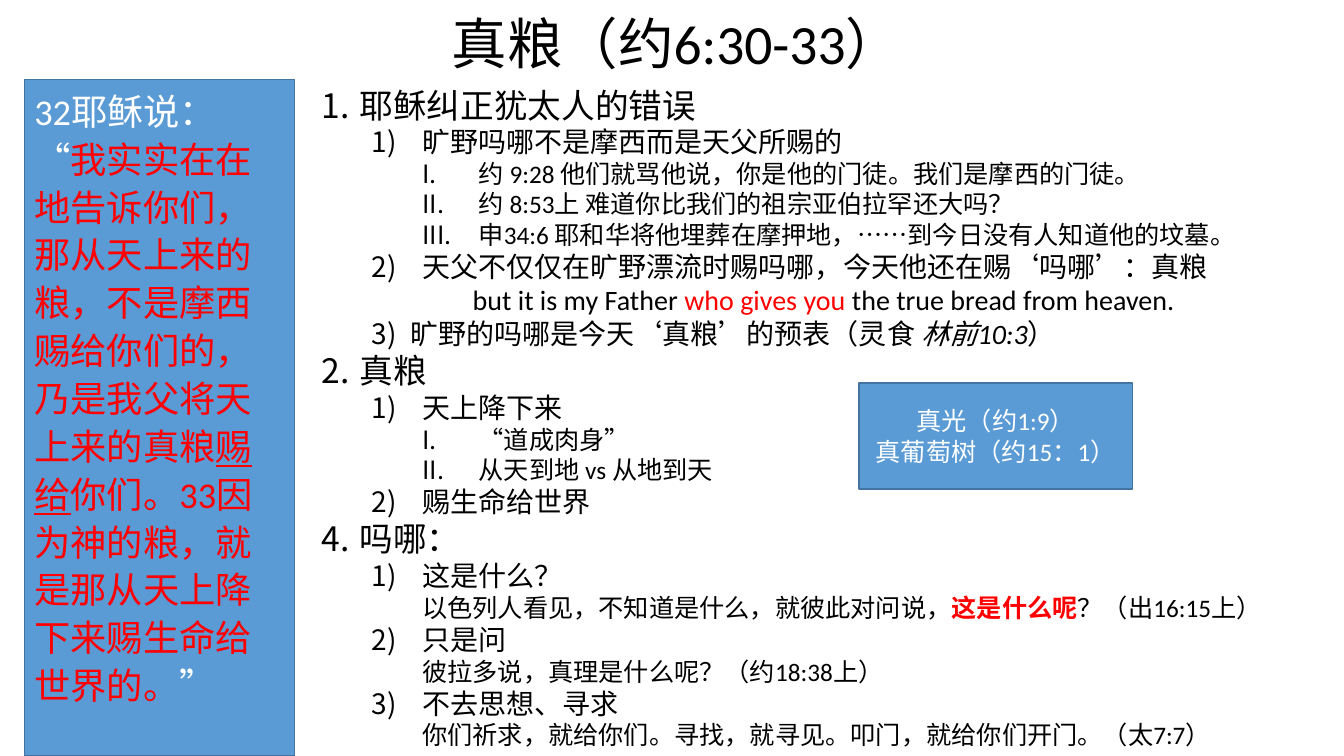
from dataclasses import dataclass

import pptx
import pptx.dml.color
import pptx.enum.lang
import pptx.enum.shapes
import pptx.enum.text
import pptx.oxml
import pptx.oxml.ns
import pptx.util

Inches = pptx.util.Inches
Pt = pptx.util.Pt
ALIGN = pptx.enum.text.PP_ALIGN
ANCHOR = pptx.enum.text.MSO_ANCHOR
FIT = pptx.enum.text.MSO_AUTO_SIZE


@dataclass(frozen=True)
class Theme:
    font: str = "Calibri"
    ink: str = "000000"
    light: str = "FFFFFF"
    accent: str = "FF0000"
    fill: str = "5B9BD5"
    border: str = "43739E"
    title_size: float = 39.6
    verse_size: float = 25.9
    point_size: float = 24
    sub_size: float = 20
    detail_size: float = 18


THEME = Theme()

# Outline style: level, size, left margin, hanging indent, numbering
STYLES = {
    "point": (0, THEME.point_size, 0.38, -0.38, "arabicPeriod"),
    "sub": (1, THEME.sub_size, 1, -0.5, "arabicParenR"),
    "close_sub": (1, THEME.sub_size, 0.88, -0.38, "arabicParenR"),
    "detail": (2, THEME.detail_size, 1.56, -0.56, "romanUcPeriod"),
    "note": (2, THEME.detail_size, 1, 0, None),
    "quote": (3, THEME.sub_size, 1.5, 0, None),
}

# Each entry: style, then runs as text or (text, format)
OUTLINE = [
    ("point", "耶稣纠正犹太人的错误"),
    ("sub", "旷野吗哪不是摩西而是天父所赐的"),
    ("detail", "约 9:28 他们就骂他说，你是他的门徒。我们是摩西的门徒。"),
    ("detail", "约 8:53上 难道你比我们的祖宗亚伯拉罕还大吗？"),
    ("detail", "申34:6 耶和华将他埋葬在摩押地，……到今日没有人知道他的坟墓。"),
    ("sub", "天父不仅仅在旷野漂流时赐吗哪，今天他还在赐‘吗哪’：真粮"),
    ("quote", "but it is my Father ", ("who gives you ", {"color": THEME.accent}),
     "the true bread from heaven."),
    ("close_sub", "旷野的吗哪是今天‘真粮’的预表（灵食 ", ("林前10:3", {"italic": True}), "）"),
    ("point", "真粮"),
    ("sub", "天上降下来"),
    ("detail", "“道成肉身”"),
    ("detail", "从天到地 vs 从地到天"),
    ("sub", "赐生命给世界"),
    ("point", "吗哪："),
    ("sub", "这是什么？"),
    ("note", "以色列人看见，不知道是什么，就彼此对问说，",
     ("这是什么呢", {"color": THEME.accent, "bold": True}), "？（出16:15上）"),
    ("sub", "只是问"),
    ("note", "彼拉多说，真理是什么呢？（约18:38上）"),
    ("sub", "不去思想、寻求"),
    ("note", "你们祈求，就给你们。寻找，就寻见。叩门，就给你们开门。（太7:7）"),
]
START_NUMBERS = {"吗哪：": 4}

VERSE = [
    ("32耶稣说：“", {"color": THEME.light}),
    "我实实在在地告诉你们，那从天上来的粮，不是摩西赐给你们的，乃是我父将天上来的真粮",
    ("赐给", {"underline": True}),
    "你们。33因为神的粮，就是那从天上降下来赐生命给世界的。",
    ("”", {"color": THEME.light}),
]


def rgb(color):
    return pptx.dml.color.RGBColor.from_string(color)


def add_text(paragraph, text, size, color=THEME.ink, bold=False, italic=False, underline=False):
    run = paragraph.add_run()
    run.text = text
    font = run.font
    font.name = THEME.font
    font.size = Pt(size)
    font.color.rgb = rgb(color)
    font.bold, font.italic, font.underline = bold, italic, underline
    font.language_id = pptx.enum.lang.MSO_LANGUAGE_ID.SIMPLIFIED_CHINESE


def add_runs(paragraph, runs, **base):
    for run in runs:
        text, changes = (run, {}) if isinstance(run, str) else run
        add_text(paragraph, text, **{**base, **changes})


def set_list_format(paragraph, left, indent, numbering=None, start=None):
    properties = paragraph._p.get_or_add_pPr()
    properties.set("marL", str(Inches(left)))
    properties.set("indent", str(Inches(indent)))
    bullet = pptx.oxml.parse_xml(
        f'<a:{"buAutoNum" if numbering else "buNone"} {pptx.oxml.ns.nsdecls("a")}/>')
    if numbering:
        bullet.set("type", numbering)
    if start:
        bullet.set("startAt", str(start))
    properties.append(bullet)


def place(shape, left, top, width, height):
    shape.left, shape.top = Inches(left), Inches(top)
    shape.width, shape.height = Inches(width), Inches(height)


def paint_box(shape):
    shape.fill.solid()
    shape.fill.fore_color.rgb = rgb(THEME.fill)
    shape.line.color.rgb = rgb(THEME.border)
    shape.line.width = Pt(1)


def fill_title(title):
    place(title, 0.96, 0.13, 11.5, 0.66)
    frame = title.text_frame
    frame.auto_size = FIT.NONE
    frame.vertical_anchor = ANCHOR.MIDDLE
    paragraph = frame.paragraphs[0]
    paragraph.alignment = ALIGN.CENTER
    paragraph.line_spacing = 0.9
    add_text(paragraph, "真粮（约6:30-33）", THEME.title_size)


def fill_verse_panel(panel):
    place(panel, 0.24, 0.79, 2.68, 6.71)
    paint_box(panel)
    frame = panel.text_frame
    frame.auto_size = FIT.NONE
    frame.vertical_anchor = ANCHOR.TOP
    paragraph = frame.paragraphs[0]
    paragraph.line_spacing = 1.1
    paragraph.space_before = Pt(10)
    set_list_format(paragraph, 0, 0)
    add_runs(paragraph, VERSE, size=THEME.verse_size, color=THEME.accent)


def add_outline(slide):
    box = slide.shapes.add_textbox(Inches(3.09), Inches(0.79), Inches(10.07), Inches(7.07))
    frame = box.text_frame
    frame.word_wrap = True
    frame.auto_size = FIT.SHAPE_TO_FIT_TEXT
    for index, (style, *runs) in enumerate(OUTLINE):
        paragraph = frame.add_paragraph() if index else frame.paragraphs[0]
        level, size, left, indent, numbering = STYLES[style]
        paragraph.level = level
        set_list_format(paragraph, left, indent, numbering, START_NUMBERS.get(runs[0]))
        add_runs(paragraph, runs, size=size)


def add_callout(slide, lines):
    rectangle = pptx.enum.shapes.MSO_SHAPE.RECTANGLE
    callout = slide.shapes.add_shape(
        rectangle, Inches(8.52), Inches(3.8), Inches(2.71), Inches(1.05))
    callout.shadow.inherit = False
    paint_box(callout)
    frame = callout.text_frame
    frame.word_wrap = True
    frame.vertical_anchor = ANCHOR.MIDDLE
    for index, line in enumerate(lines):
        paragraph = frame.add_paragraph() if index else frame.paragraphs[0]
        paragraph.alignment = ALIGN.CENTER
        add_text(paragraph, line, THEME.detail_size, color=THEME.light)


def main():
    presentation = pptx.Presentation()
    presentation.slide_width = Inches(13.33)
    presentation.slide_height = Inches(7.5)
    slide = presentation.slides.add_slide(presentation.slide_layouts[1])

    # Title and scripture panel
    fill_title(slide.shapes.title)
    fill_verse_panel(slide.placeholders[1])

    # Outline with its side references
    add_outline(slide)
    add_callout(slide, ["真光（约1:9）", "真葡萄树（约15：1）"])

    presentation.save("out.pptx")


if __name__ == "__main__":
    main()
